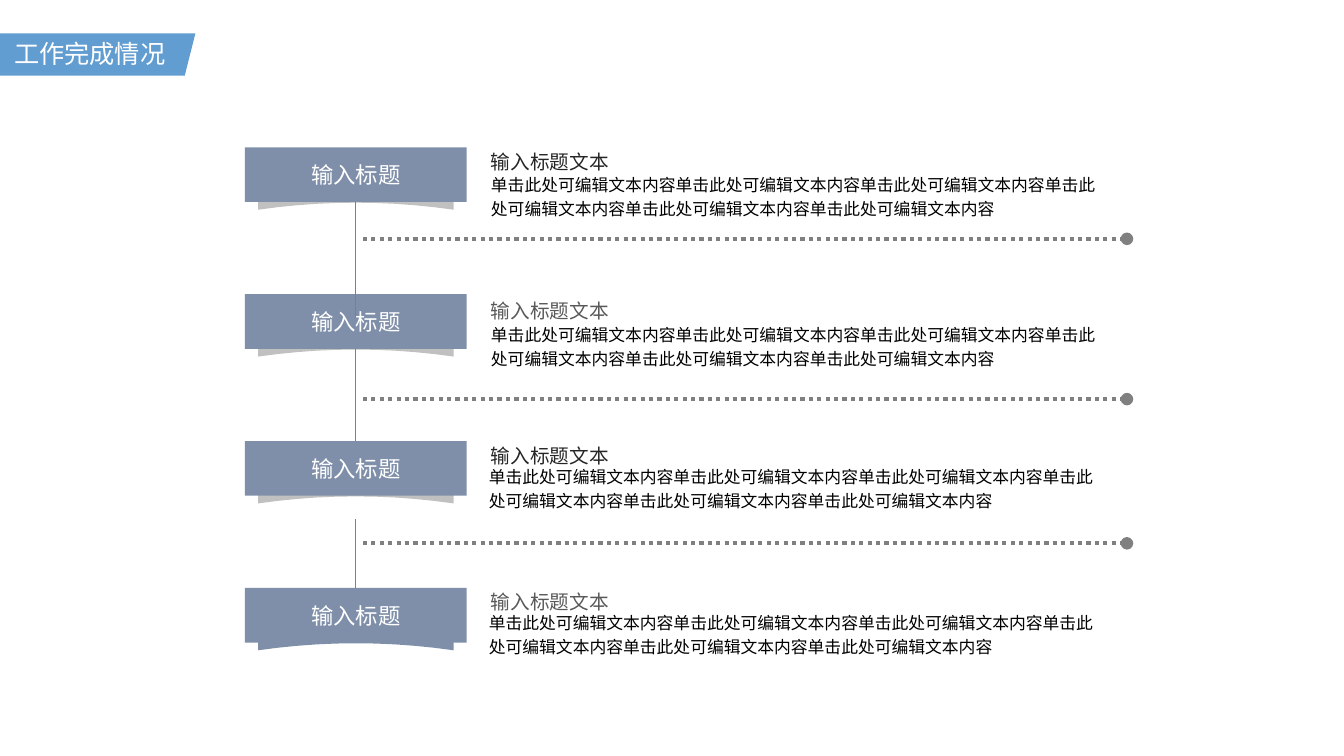
from typing import NamedTuple

from lxml.etree import SubElement
from pptx import Presentation
from pptx.dml.color import RGBColor
from pptx.enum.dml import MSO_LINE
from pptx.enum.shapes import MSO_CONNECTOR, MSO_SHAPE
from pptx.enum.text import MSO_ANCHOR, MSO_AUTO_SIZE, PP_ALIGN
from pptx.oxml.ns import qn
from pptx.util import Pt

WHITE = RGBColor(0xFF, 0xFF, 0xFF)
BLACK = RGBColor(0x00, 0x00, 0x00)
DARK = RGBColor(0x26, 0x26, 0x26)
MEDIUM = RGBColor(0x59, 0x59, 0x59)
GREY = RGBColor(0x80, 0x80, 0x80)
SILVER = RGBColor(0xC0, 0xC0, 0xC0)
SLATE = RGBColor(0x7F, 0x8F, 0xA9)
BLUE = RGBColor(0x62, 0x9D, 0xD1)

LATIN_FONT = "Arial"
CJK_FONT = "Noto Sans CJK JP"

CARD_LEFT, CARD_TOP, CARD_PITCH = 175, 105.2, 104.9
CARD_WIDTH, CARD_HEIGHT = 158.4, 39.1
AXIS = CARD_LEFT + CARD_WIDTH / 2
FOLD_HALF = 69.8
FOLD_STEPS = 10
BOTTOM, TOP = 2, 0
DESCRIPTION = "单击此处可编辑文本内容" * 6


class Entry(NamedTuple):
    heading_top: float
    heading_width: float
    heading_color: RGBColor
    heading_spacing: float
    detail_left: float
    detail_top: float


ENTRIES = [
    Entry(106.6, 102.2, DARK, 1, 333.4, 118.1),
    Entry(213.1, 102.2, MEDIUM, 1, 333.4, 225.4),
    Entry(316.8, 307.4, DARK, 0.9, 331.9, 326.9),
    Entry(421.2, 102.2, MEDIUM, 1, 331.9, 431.3),
]
GUIDE_HEIGHTS = [170.6, 285.1, 388.1]


def card_top(index):
    return CARD_TOP + index * CARD_PITCH


def place(shape, left, top, width, height):
    shape.left, shape.top = Pt(left), Pt(top)
    shape.width, shape.height = Pt(width), Pt(height)


def paint(shape, color):
    shape.shadow.inherit = False
    shape.fill.solid()
    shape.fill.fore_color.rgb = color
    shape.line.fill.background()


def write(paragraph, text, size, color, font=LATIN_FONT):
    run = paragraph.add_run()
    run.text = text
    run.font.name = font
    run.font.size = Pt(size)
    run.font.color.rgb = color
    SubElement(run._r.get_or_add_rPr(), qn("a:ea"), typeface=CJK_FONT)


def set_insets(frame, left, top, right, bottom):
    frame.margin_left, frame.margin_top = Pt(left), Pt(top)
    frame.margin_right, frame.margin_bottom = Pt(right), Pt(bottom)


def add_title(slide, text):
    title = slide.shapes.title
    place(title, 2.9, 23.8, 130.3, 29.5)
    frame = title.text_frame
    frame.word_wrap = True
    frame.auto_size = MSO_AUTO_SIZE.SHAPE_TO_FIT_TEXT
    frame.vertical_anchor = MSO_ANCHOR.TOP
    set_insets(frame, 7.2, 3.6, 7.2, 3.6)
    paragraph = frame.paragraphs[0]
    paragraph.alignment = PP_ALIGN.LEFT
    write(paragraph, text, 18, WHITE)

    banner = slide.shapes.add_shape(
        MSO_SHAPE.PARALLELOGRAM, Pt(-38.2), Pt(23.8), Pt(177.8), Pt(30.2))
    paint(banner, BLUE)
    title.element.addprevious(banner.element)


def add_fold(slide, index, color):
    """Draw the curved paper edge that shows below a card."""
    top = card_top(index)
    outline = []
    for step in range(FOLD_STEPS + 1):
        offset = 1 - 2 * step / FOLD_STEPS
        outline.append((Pt(AXIS + FOLD_HALF * offset),
                        Pt(top + 39.6 + 5 * offset ** 2)))
    outline += [(Pt(AXIS - FOLD_HALF), Pt(top + 30.2)),
                (Pt(AXIS), Pt(top + 25.9)),
                (Pt(AXIS + FOLD_HALF), Pt(top + 30.2))]
    builder = slide.shapes.build_freeform(*outline[0])
    builder.add_line_segments(outline[1:], close=True)
    paint(builder.convert_to_shape(), color)


def add_card(slide, index):
    card = slide.shapes.add_shape(
        MSO_SHAPE.RECTANGLE, Pt(CARD_LEFT), Pt(card_top(index)),
        Pt(CARD_WIDTH), Pt(CARD_HEIGHT))
    paint(card, SLATE)
    frame = card.text_frame
    frame.word_wrap = False
    frame.vertical_anchor = MSO_ANCHOR.MIDDLE
    frame.paragraphs[0].alignment = PP_ALIGN.CENTER
    write(frame.paragraphs[0], "输入标题", 16, WHITE)
    return card


def add_line(slide, start, end, width):
    line = slide.shapes.add_connector(
        MSO_CONNECTOR.STRAIGHT, *map(Pt, start), *map(Pt, end))
    line.line.color.rgb = GREY
    line.line.width = Pt(width)
    SubElement(line.element.spPr, qn("a:effectLst"))
    return line


def add_stem(slide, top, bottom):
    return add_line(slide, (AXIS, top), (AXIS, bottom), 0.75)


def add_guide(slide, height):
    guide = add_line(slide, (259.2, height), (805, height), 3)
    guide.line.dash_style = MSO_LINE.ROUND_DOT
    SubElement(guide.line._get_or_add_ln(), qn("a:tailEnd"), type="oval")


def add_text_area(slide, left, top, width, height):
    area = slide.shapes.add_textbox(Pt(left), Pt(top), Pt(width), Pt(height))
    return area.text_frame


def add_entry(slide, entry):
    heading = add_text_area(
        slide, 333.4, entry.heading_top, entry.heading_width, 17)
    heading.word_wrap = False
    heading.vertical_anchor = MSO_ANCHOR.BOTTOM
    set_insets(heading, 17.3, 0, 0, 0)
    heading.paragraphs[0].line_spacing = entry.heading_spacing
    write(heading.paragraphs[0], "输入标题文本", 14, entry.heading_color)

    detail = add_text_area(
        slide, entry.detail_left, entry.detail_top, 461.5, 25.9)
    detail.word_wrap = True
    set_insets(detail, 17.3, 3.6, 7.2, 3.6)
    detail.paragraphs[0].line_spacing = 1.2
    write(detail.paragraphs[0], DESCRIPTION, 12, BLACK, CJK_FONT)


def main():
    deck = Presentation()
    deck.slide_width, deck.slide_height = Pt(960), Pt(540)
    slide = deck.slides.add_slide(deck.slide_layouts[5])

    add_title(slide, "工作完成情况")
    for index, color in enumerate([SILVER, SILVER, SILVER, SLATE]):
        add_fold(slide, index, color)

    # The second stem runs behind the third card, the first in front of the second.
    cards = [add_card(slide, index) for index in (0, 1)]
    second_stem = add_stem(slide, card_top(1) + CARD_HEIGHT, 331.2)
    second_stem.begin_connect(cards[1], BOTTOM)
    cards += [add_card(slide, index) for index in (2, 3)]
    first_stem = add_stem(slide, card_top(0) + CARD_HEIGHT, 226.8)
    first_stem.begin_connect(cards[0], BOTTOM)
    third_stem = add_stem(slide, 370.8, card_top(3))
    third_stem.end_connect(cards[3], TOP)

    for height in GUIDE_HEIGHTS:
        add_guide(slide, height)
    for entry in ENTRIES:
        add_entry(slide, entry)
    deck.save("out.pptx")


if __name__ == "__main__":
    main()
